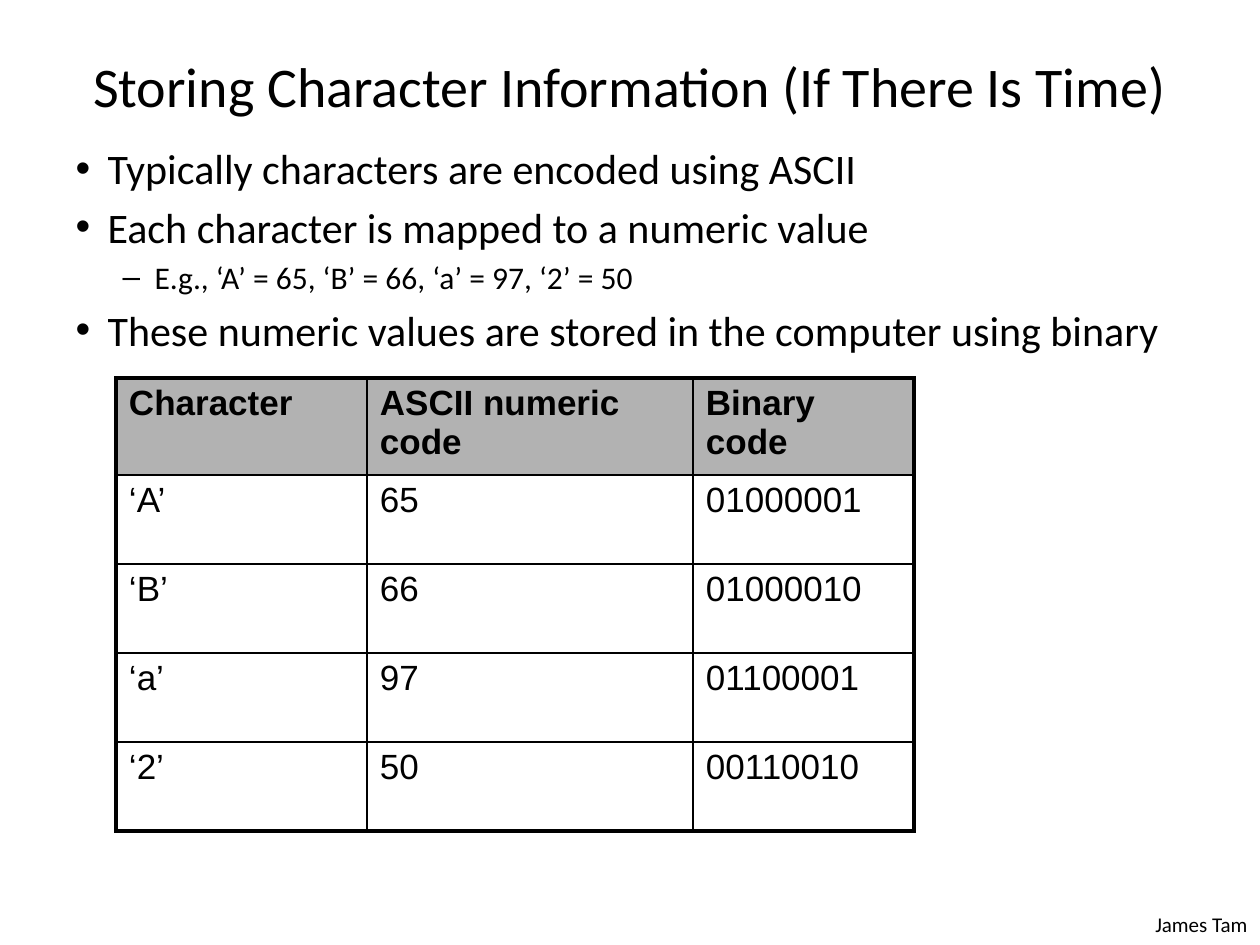
import pptx
import pptx.util
import pptx.dml.color
import pptx.enum.text
import pptx.oxml.ns
import lxml.etree

Pt = pptx.util.Pt
Align = pptx.enum.text.PP_ALIGN
Anchor = pptx.enum.text.MSO_ANCHOR
Fit = pptx.enum.text.MSO_AUTO_SIZE
SCALE = 914400 / 126

BLACK = "000000"
GREY = "B2B2B2"
THIN = 1
THICK = 2.25

POINTS = [
    (0, "Typically characters are encoded using ASCII"),
    (0, "Each character is mapped to a numeric value"),
    (1, "E.g., ‘A’ = 65, ‘B’ = 66, ‘a’ = 97, ‘2’ = 50"),
    (0, "These numeric values are stored in the computer using binary"),
]
CODES = [
    ("Character", "ASCII numeric code", "Binary code"),
    ("‘A’", "65", "01000001"),
    ("‘B’", "66", "01000010"),
    ("‘a’", "97", "01100001"),
    ("‘2’", "50", "00110010"),
]
WIDTHS = [251, 326, 221]
HEIGHTS = [97, 89, 89, 89, 89]


def px(count):
    return round(count * SCALE)


def color(code):
    return pptx.dml.color.RGBColor.from_string(code)


def apply(item, values):
    for name, value in values.items():
        setattr(item, name, value)


def style(para, size, font="Calibri", bold=False):
    apply(para.font, {"size": Pt(size), "name": font, "bold": bold})
    para.font.color.rgb = color(BLACK)


def place(shape, left, top, width, height):
    apply(shape, {"left": px(left), "top": px(top),
                  "width": px(width), "height": px(height)})


def add_title(slide, text):
    title = slide.shapes.title
    place(title, 63, 35, 1134, 101)
    frame = title.text_frame
    frame.text = text
    apply(frame, {"auto_size": Fit.NONE, "vertical_anchor": Anchor.MIDDLE})
    para = frame.paragraphs[0]
    para.alignment = Align.CENTER
    style(para, 32)


def add_list(slide, points):
    body = slide.placeholders[1]
    place(body, 63, 136, 1115, 748)
    frame = body.text_frame
    frame.text = "\n".join(text for level, text in points)
    frame.auto_size = Fit.NONE
    for row, (para, (level, text)) in enumerate(zip(frame.paragraphs, points)):
        size = 18 if level else 24
        para.level = level
        para.space_before = Pt(size * 0.2 if row else 0)
        style(para, size)
        props = para._p.get_or_add_pPr()
        props.set("marL", str(px(79 if level else 32)))
        props.set("indent", str(px(-32)))


def add_edge(cell, side, width):
    tag = pptx.oxml.ns.qn
    props = cell._tc.get_or_add_tcPr()
    line = lxml.etree.SubElement(props, tag("a:ln" + side), w=str(Pt(width)))
    fill = lxml.etree.SubElement(line, tag("a:solidFill"))
    lxml.etree.SubElement(fill, tag("a:srgbClr"), val=BLACK)


def fill_cell(cell, text, head, edges):
    cell.text = text
    apply(cell, {"margin_left": px(13), "margin_right": px(13),
                 "margin_top": px(6), "margin_bottom": px(6),
                 "vertical_anchor": Anchor.TOP})
    style(cell.text_frame.paragraphs[0], 20, "Arial", head)
    for side, outer in edges.items():
        add_edge(cell, side, THICK if outer else THIN)
    if head:
        cell.fill.solid()
        cell.fill.fore_color.rgb = color(GREY)
    else:
        cell.fill.background()


def add_grid(slide, rows):
    count, span = len(rows), len(rows[0])
    frame = slide.shapes.add_table(count, span, px(116), px(378),
                                   px(sum(WIDTHS)), px(sum(HEIGHTS)))
    table = frame.table
    apply(table, {"first_row": False, "horz_banding": False})
    for column, width in zip(table.columns, WIDTHS):
        column.width = px(width)
    for row, height in zip(table.rows, HEIGHTS):
        row.height = px(height)
    for r, row in enumerate(rows):
        for c, text in enumerate(row):
            edges = {"L": c == 0, "R": c == span - 1,
                     "T": r == 0, "B": r == count - 1}
            fill_cell(table.cell(r, c), text, r == 0, edges)


def add_note(slide, text):
    box = slide.shapes.add_textbox(px(1092), px(905), px(168), px(38))
    frame = box.text_frame
    frame.word_wrap = True
    frame.text = text
    para = frame.paragraphs[0]
    para.alignment = Align.RIGHT
    style(para, 12)


def main():
    deck = pptx.Presentation()
    apply(deck, {"slide_width": px(1260), "slide_height": px(945)})
    slide = deck.slides.add_slide(deck.slide_layouts[1])
    add_note(slide, "James Tam")
    add_list(slide, POINTS)
    add_title(slide, "Storing Character Information (If There Is Time)")
    add_grid(slide, CODES)
    deck.save("out.pptx")


if __name__ == "__main__":
    main()
